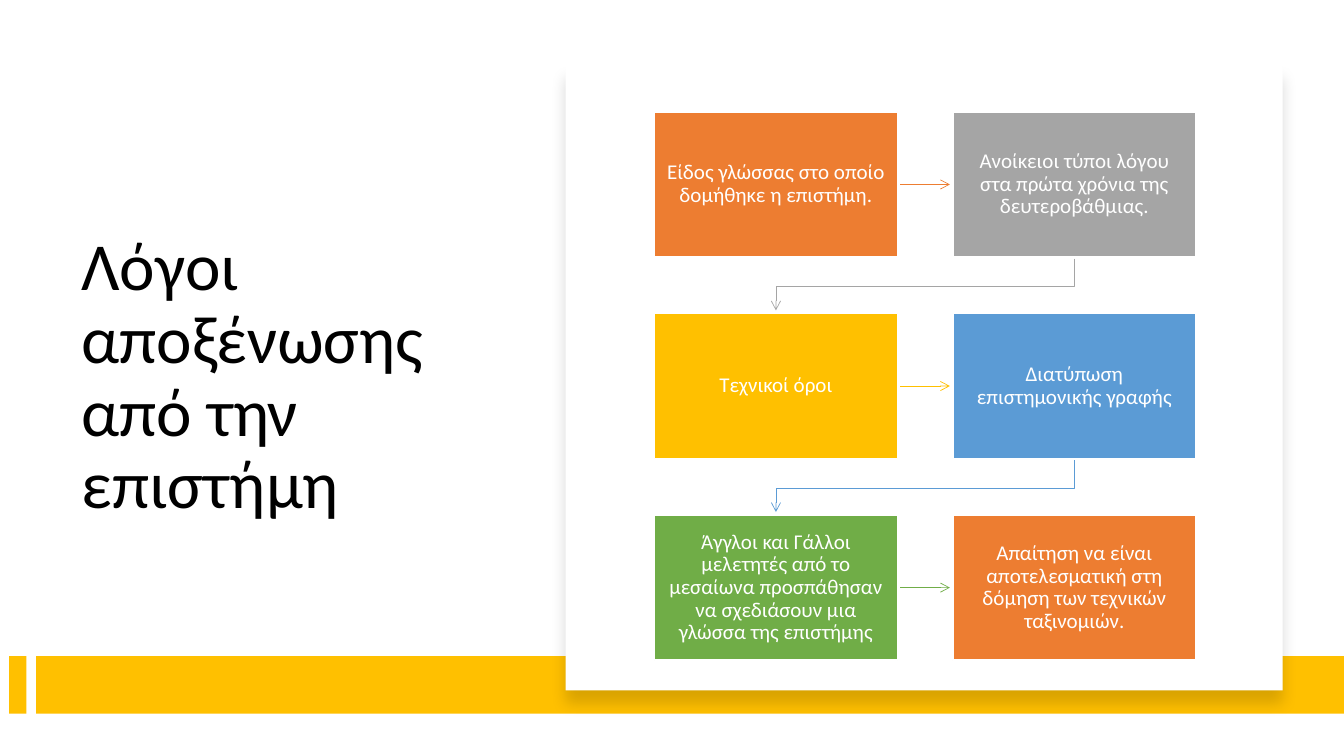
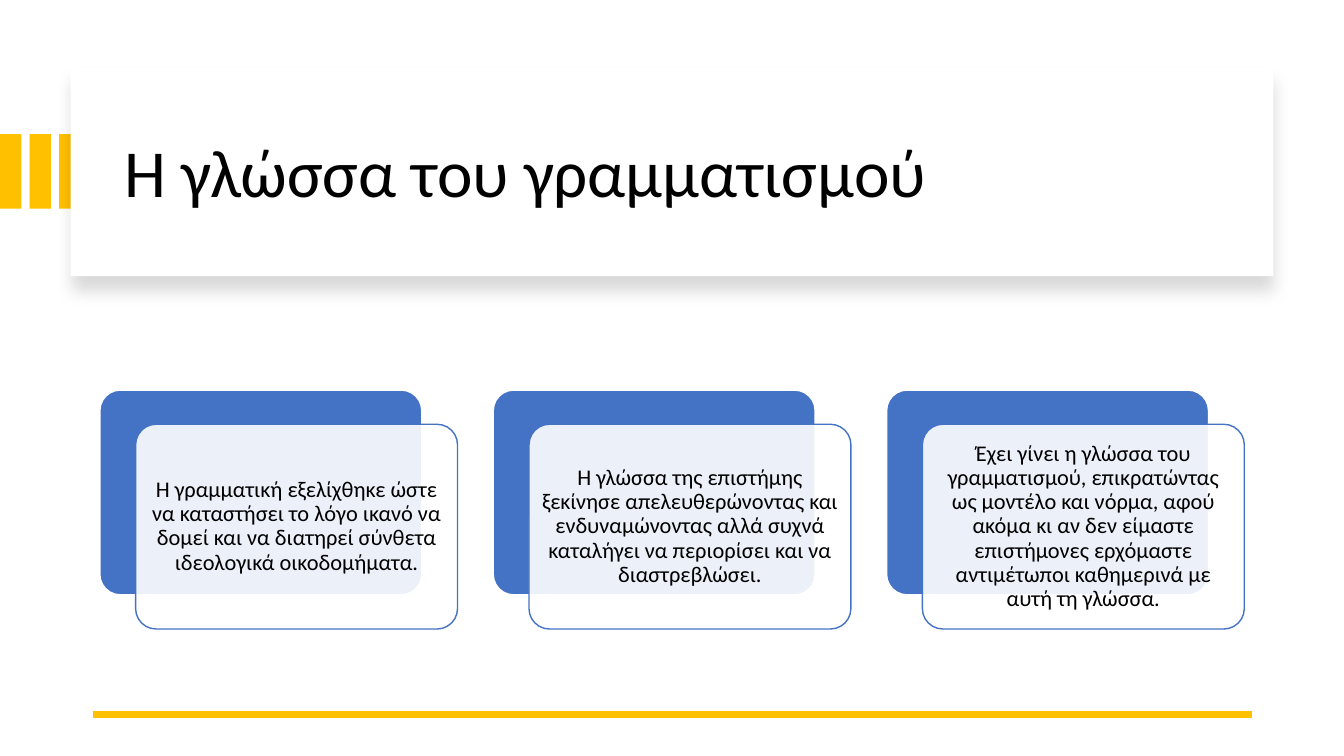
from itertools import pairwise
from typing import NamedTuple

from lxml.etree import SubElement
from pptx import Presentation
from pptx.dml.color import RGBColor
from pptx.enum.shapes import MSO_CONNECTOR, MSO_SHAPE
from pptx.enum.text import MSO_ANCHOR, PP_ALIGN
from pptx.oxml.ns import qn
from pptx.util import Inches, Pt

FONT = "Calibri"
HUES = {
    "white": "FFFFFF",
    "black": "000000",
    "gold": "FFC000",
    "orange": "ED7D31",
    "grey": "A5A5A5",
    "sky": "5B9BD5",
    "green": "70AD47",
    "blue": "4472C4",
}

STEPS = [
    ("orange", "Είδος γλώσσας στο οποίο δομήθηκε η επιστήμη."),
    ("grey", "Ανοίκειοι τύποι λόγου στα πρώτα χρόνια της δευτεροβάθμιας."),
    ("gold", "Τεχνικοί όροι"),
    ("sky", "Διατύπωση επιστημονικής γραφής"),
    ("green", "Άγγλοι και Γάλλοι μελετητές από το μεσαίωνα προσπάθησαν "
              "να σχεδιάσουν μια γλώσσα της επιστήμης"),
    ("orange", "Απαίτηση να είναι αποτελεσματική στη δόμηση των τεχνικών "
               "ταξινομιών."),
]
CARDS = [
    "Η γραμματική εξελίχθηκε ώστε να καταστήσει το λόγο ικανό να δομεί "
    "και να διατηρεί σύνθετα ιδεολογικά οικοδομήματα.",
    "Η γλώσσα της επιστήμης ξεκίνησε απελευθερώνοντας και ενδυναμώνοντας "
    "αλλά συχνά καταλήγει να περιορίσει και να διαστρεβλώσει.",
    "Έχει γίνει η γλώσσα του γραμματισμού, επικρατώντας ως μοντέλο και "
    "νόρμα, αφού ακόμα κι αν δεν είμαστε επιστήμονες ερχόμαστε "
    "αντιμέτωποι καθημερινά με αυτή τη γλώσσα.",
]


class Box(NamedTuple):
    x: float
    y: float
    w: float
    h: float

    def area(self, x, y, w, h):
        """Return the inner box given in percent of this one."""
        return Box(self.x + self.w * x / 100, self.y + self.h * y / 100,
                   self.w * w / 100, self.h * h / 100)

    def grid(self, cols, rows, wide, high=100):
        """Return equal cells, row by row; cell size in percent of the box."""
        across = (100 - wide) / max(cols - 1, 1)
        down = (100 - high) / max(rows - 1, 1)
        return [self.area(col * across, row * down, wide, high)
                for row in range(rows) for col in range(cols)]

    def emu(self):
        return [Inches(side) for side in self]


PAGE = Box(0, 0, 13.33, 7.5)


def hue(name):
    return RGBColor.from_string(HUES[name])


def effects(shape):
    """Replace the theme's effects by an empty list and return it."""
    props = shape._element.spPr
    for old in props.findall(qn("a:effectLst")):
        props.remove(old)
    return SubElement(props, qn("a:effectLst"))


def stroke(shape, color, width, arrow=False):
    shape.line.color.rgb = hue(color)
    shape.line.width = Pt(width)
    if arrow:
        SubElement(shape.line._get_or_add_ln(), qn("a:tailEnd"), type="arrow")
    effects(shape)


def block(slide, box, fill, line=None, round=None, alpha=None):
    kind = MSO_SHAPE.RECTANGLE if round is None else MSO_SHAPE.ROUNDED_RECTANGLE
    shape = slide.shapes.add_shape(kind, *box.emu())
    if round is not None:
        shape.adjustments[0] = round
    shape.fill.solid()
    shape.fill.fore_color.rgb = hue(fill)
    if alpha is not None:
        color = shape._element.spPr.find(qn("a:solidFill"))[0]
        SubElement(color, qn("a:alpha"), val=str(alpha * 1000))
    if line:
        stroke(shape, line, 1)
    else:
        shape.line.fill.background()
        effects(shape)
    return shape


def write(shape, text, size, color="black", align=PP_ALIGN.CENTER, inset=None):
    frame = shape.text_frame
    frame.word_wrap = True
    frame.vertical_anchor = MSO_ANCHOR.MIDDLE
    if inset is not None:
        frame.margin_left = frame.margin_right = Inches(inset)
        frame.margin_top = frame.margin_bottom = Inches(inset)
    para = frame.paragraphs[0]
    para.alignment = align
    para.line_spacing = 0.9
    run = para.add_run()
    run.text = text
    run.font.name = FONT
    run.font.size = Pt(size)
    run.font.color.rgb = hue(color)


def title(slide, box, text):
    write(slide.shapes.add_textbox(*box.emu()), text, 48, align=PP_ALIGN.LEFT)


def panel(slide, box):
    """Draw a white sheet with a soft shadow below it."""
    shade = SubElement(effects(block(slide, box, "white")), qn("a:outerShdw"),
                       blurRad=str(Pt(11)), dist=str(Pt(10)), dir="5400000",
                       algn="t", rotWithShape="0")
    color = SubElement(shade, qn("a:srgbClr"), val=HUES["black"])
    SubElement(color, qn("a:alpha"), val="15000")


def rule(slide, start, end, color, width, arrow=False):
    ends = [Inches(side) for side in (*start, *end)]
    line = slide.shapes.add_connector(MSO_CONNECTOR.STRAIGHT, *ends)
    stroke(line, color, width, arrow)


def bend(slide, start, end, color):
    """Draw an arrow that goes down, across and down again."""
    (x, y), (left, low) = start, end
    mid = (y + low) / 2 + 0.02
    route = [(Inches(a), Inches(b))
             for a, b in ((x, y), (x, mid), (left, mid), (left, low))]
    pen = slide.shapes.build_freeform(*route[0])
    pen.add_line_segments(route[1:], close=False)
    shape = pen.convert_to_shape()
    shape.fill.background()
    stroke(shape, color, 0.5, arrow=True)


def link(slide, one, two, color):
    """Join two steps, along a row or on to the next row."""
    gap = 0.03
    if one.y == two.y:
        mid = one.y + one.h / 2
        rule(slide, (one.x + one.w + gap, mid), (two.x - gap, mid),
             color, 0.5, arrow=True)
    else:
        bend(slide, (one.x + one.w / 2, one.y + one.h + gap / 2),
             (two.x + two.w / 2, two.y - gap), color)


def flow(slide, box, steps):
    cells = box.grid(2, 3, 44.88, 26.47)
    for (color, _), (one, two) in zip(steps, pairwise(cells)):
        link(slide, one, two, color)
    for cell, (color, text) in zip(cells, steps):
        write(block(slide, cell, color, "white"), text, 15, "white", inset=0.12)


def cards(slide, box, texts):
    for cell, text in zip(box.grid(len(texts), 1, 31.25), texts):
        block(slide, cell.area(0, 0, 90, 85.7), "blue", "white", round=0.1)
        front = block(slide, cell.area(10, 14.3, 90, 85.7), "white", "blue",
                      round=0.1, alpha=90)
        write(front, text, 16, inset=0.07)


def reasons(slide):
    title(slide, PAGE.area(5.33, 16, 31.13, 68),
          "Λόγοι αποξένωσης από την επιστήμη")
    band = PAGE.area(0, 86.8, 100, 7.6)
    for x, w in ((0.68, 1.28), (2.7, 97.3)):
        block(slide, band.area(x, 0, w, 100), "gold")
    panel(slide, PAGE.area(42.09, 8.53, 53.34, 82.8))
    flow(slide, PAGE.area(48.69, 14.8, 40.29, 72.53), STEPS)


def grammar(slide):
    for bar in PAGE.area(0, 17.73, 6, 9.87).grid(3, 1, 26.5):
        block(slide, bar, "gold")
    panel(slide, PAGE.area(5.25, 8.93, 89.5, 27.6))
    title(slide, PAGE.area(8.55, 11.87, 83.5, 22.67),
          "H γλώσσα του γραμματισμού")
    foot = PAGE.area(6.9, 94.53, 86.27, 0)
    rule(slide, (foot.x, foot.y), (foot.x + foot.w, foot.y), "gold", 4.5)
    cards(slide, PAGE.area(7.43, 51.6, 85.15, 31.6), CARDS)


def main():
    deck = Presentation()
    deck.slide_width, deck.slide_height = PAGE.emu()[2:]
    for build in (reasons, grammar):
        build(deck.slides.add_slide(deck.slide_layouts[6]))
    deck.save("out.pptx")


if __name__ == "__main__":
    main()
